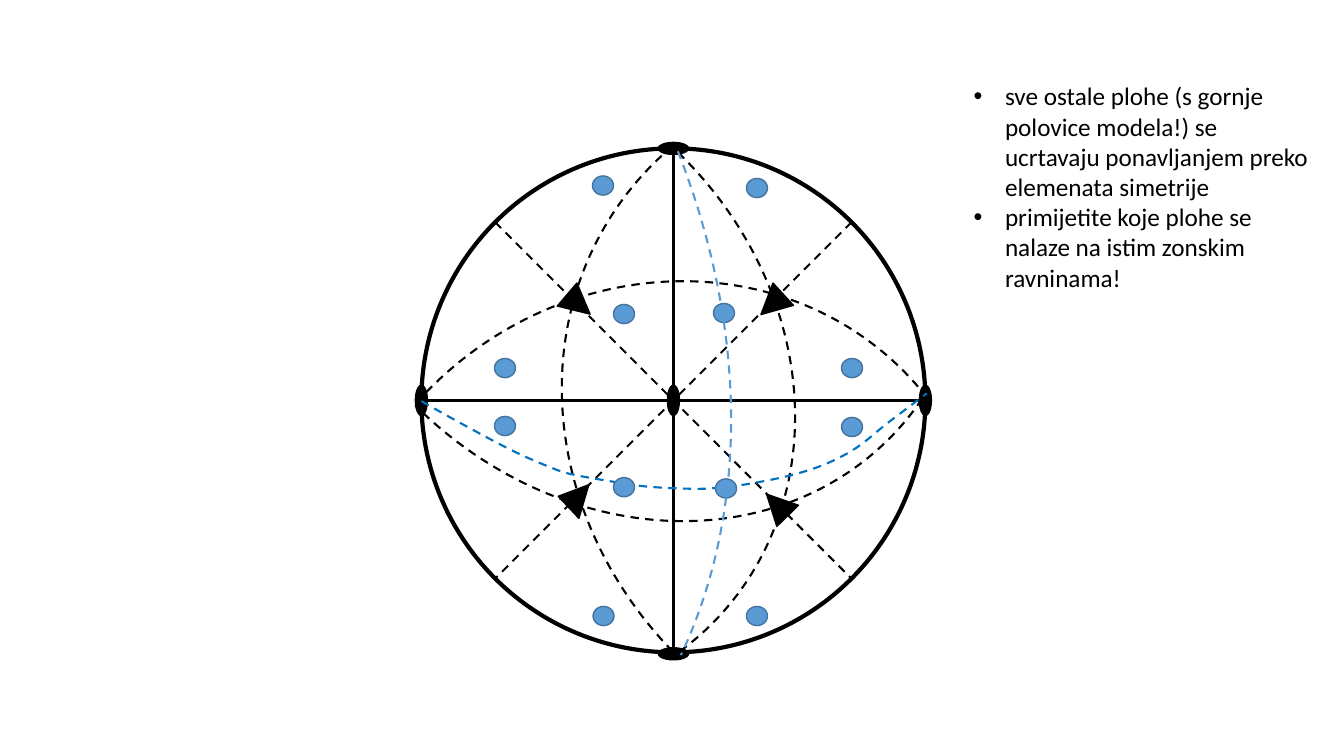
import pptx
import pptx.dml.color
import pptx.enum.dml
import pptx.enum.shapes
import pptx.enum.text
import pptx.oxml.ns
import pptx.util
from lxml import etree

Pt = pptx.util.Pt
RGBColor = pptx.dml.color.RGBColor
MSO_SHAPE = pptx.enum.shapes.MSO_SHAPE
qn = pptx.oxml.ns.qn

BLACK = RGBColor(0x00, 0x00, 0x00)
LIGHT_BLUE = RGBColor(0x5B, 0x9B, 0xD5)
DARK_BLUE = RGBColor(0x43, 0x73, 0x9E)
ZONE_BLUE = RGBColor(0x00, 0x70, 0xC0)

# Stereographic projection circle
CX, CY, RADIUS = 481, 286, 180
DIAGONAL = 127.3

# Two-fold axes: centre x, centre y, rotation
DIGYRES = [(CX, CY, 0), (CX - RADIUS, CY, 0), (CX + RADIUS, CY, 0),
           (CX, CY - RADIUS, 90), (CX, CY + RADIUS + 1, 90)]

# Three-fold axes: centre x, centre y, rotation, apex position
TRIGYRES = [(413.3, 217.4, 130.4, 0.5), (555.1, 360.7, 315.7, 0.5),
            (551.5, 217.4, 227.6, 0.5), (414, 355, 46.8, 0.415)]

# Zone arcs: left, top, width, height, rotation, start, end
ZONE_ARCS = [(75.6, 45.4, 505.4, 446.4, 42.6, 163.054, 5.365),
             (392.4, 59, 538.6, 486, 216.3, 168.999, 6.411),
             (223.2, 209.5, 493.2, 457.2, 316.7, 160.191, 2.722),
             (228.2, -131.8, 449.3, 519.8, 137, 156.19, 214.223)]
BLUE_ARC = (-540.7, -257, 1118.9, 860.4, 43, 185.42, 209.533)

# Knots of the blue zone curve
ZONE_KNOTS = [(301, 286.6), (330.5, 303.1), (365.8, 321.8), (393.8, 334.1),
              (409.7, 339.1), (442.8, 344.9), (464.4, 347.8), (498.2, 349.2),
              (519.1, 347.8), (539.3, 344.9), (566.6, 339.1), (590.4, 331.2),
              (612, 319.7), (632.9, 303.1), (662, 281)]

# Centres of the face poles
POLES = [(518.6, 348.9), (445.7, 348), (445.7, 224.3), (517.1, 223.6),
         (608.6, 262.9), (608.6, 305), (360.7, 262.9), (360.7, 304.3),
         (540.7, 440), (431.1, 440), (540.7, 134.3), (430.7, 132.5)]

NOTES = ["sve ostale plohe (s gornje polovice modela!) se ucrtavaju "
         "ponavljanjem preko elemenata simetrije",
         "primijetite koje plohe se nalaze na istim zonskim ravninama!"]


def style_line(line, color, width, dashed=False):
    line.color.rgb = color
    line.width = Pt(width)
    if dashed:
        line.dash_style = pptx.enum.dml.MSO_LINE.DASH


def style_shape(sp, fill, color, width, dashed=False):
    sp.shadow.inherit = False
    if fill is None:
        sp.fill.background()
    else:
        sp.fill.solid()
        sp.fill.fore_color.rgb = fill
    style_line(sp.line, color, width, dashed)


def add_marker(s, kind, x, y, w, h, fill, color=BLACK, width=1, rotation=0):
    """Add a shape centred on (x, y)."""
    sp = s.shapes.add_shape(kind, Pt(x - w / 2), Pt(y - h / 2), Pt(w), Pt(h))
    sp.rotation = rotation
    style_shape(sp, fill, color, width)
    return sp


def add_arc(s, left, top, w, h, rotation, start, end, color=BLACK):
    sp = s.shapes.add_shape(MSO_SHAPE.ARC, Pt(left), Pt(top), Pt(w), Pt(h))
    sp.adjustments[0] = start
    sp.adjustments[1] = end
    sp.rotation = rotation
    style_shape(sp, None, color, 1.5, dashed=True)


def add_line(s, x1, y1, x2, y2, width, dashed=False):
    cn = s.shapes.add_connector(pptx.enum.shapes.MSO_CONNECTOR.STRAIGHT,
                                Pt(x1), Pt(y1), Pt(x2), Pt(y2))
    style_line(cn.line, BLACK, width, dashed)
    etree.SubElement(cn._element.spPr, qn("a:effectLst"))


def smooth_points(knots, steps=6):
    """Interpolate a Catmull-Rom curve through the knots."""
    padded = [knots[0], *knots, knots[-1]]
    points = [knots[0]]
    for a, b, c, d in zip(padded, padded[1:], padded[2:], padded[3:]):
        for i in range(1, steps + 1):
            t = i / steps
            points.append(tuple(
                q + t / 2 * (r - p + t * (2 * p - 5 * q + 4 * r - u
                                          + t * (3 * (q - r) + u - p)))
                for p, q, r, u in zip(a, b, c, d)))
    return points


def add_curve(s, knots, color):
    points = [(Pt(x), Pt(y)) for x, y in smooth_points(knots)]
    builder = s.shapes.build_freeform(*points[0])
    builder.add_line_segments(points[1:], close=False)
    style_shape(builder.convert_to_shape(), None, color, 1.5, dashed=True)


def add_bullets(s, left, top, w, h, texts):
    tf = s.shapes.add_textbox(Pt(left), Pt(top), Pt(w), Pt(h)).text_frame
    tf.word_wrap = True
    tf.auto_size = pptx.enum.text.MSO_AUTO_SIZE.SHAPE_TO_FIT_TEXT
    for i, text in enumerate(texts):
        p = tf.add_paragraph() if i else tf.paragraphs[0]
        p.text = text
        p.font.name = "Calibri"
        p.font.size = Pt(18)
        p.font.color.rgb = BLACK
        pPr = p._p.get_or_add_pPr()
        pPr.set("marL", str(Pt(22.5)))
        pPr.set("indent", str(-Pt(22.5)))
        bullet_font = etree.Element(qn("a:buFont"), typeface="Arial")
        bullet = etree.Element(qn("a:buChar"), char="•")
        pPr.insert(0, bullet_font)
        pPr.insert(1, bullet)


def main():
    prs = pptx.Presentation()
    prs.slide_width, prs.slide_height = Pt(960), Pt(540)
    s = prs.slides.add_slide(prs.slide_layouts[6])

    # Circle and main axes
    add_marker(s, MSO_SHAPE.OVAL, CX, CY, 2 * RADIUS, 2 * RADIUS, None, width=3)
    add_line(s, CX - RADIUS, CY, CX + RADIUS, CY, 2.25)
    add_line(s, CX, CY - RADIUS - 3, CX, CY + RADIUS - 3, 2.25)

    # Symmetry axes and diagonals
    for x, y, rotation in DIGYRES:
        add_marker(s, MSO_SHAPE.OVAL, x, y, 8.6, 21.6, BLACK, rotation=rotation)
    for side in (-1, 1):
        add_line(s, CX + side * DIAGONAL, CY - DIAGONAL,
                 CX - side * DIAGONAL, CY + DIAGONAL, 1.5, dashed=True)
    for x, y, rotation, apex in TRIGYRES:
        sp = add_marker(s, MSO_SHAPE.ISOSCELES_TRIANGLE, x, y, 21.6, 21.6,
                        BLACK, rotation=rotation)
        sp.adjustments[0] = apex

    # Zones, notes and face poles
    for arc in ZONE_ARCS:
        add_arc(s, *arc)
    add_bullets(s, 688.3, 54, 254.2, 181.4, NOTES)
    add_curve(s, ZONE_KNOTS, ZONE_BLUE)
    for x, y in POLES:
        add_marker(s, MSO_SHAPE.OVAL, x, y, 15, 13.7, LIGHT_BLUE, DARK_BLUE)
    add_arc(s, *BLUE_ARC, color=LIGHT_BLUE)

    prs.save("out.pptx")


if __name__ == "__main__":
    main()
